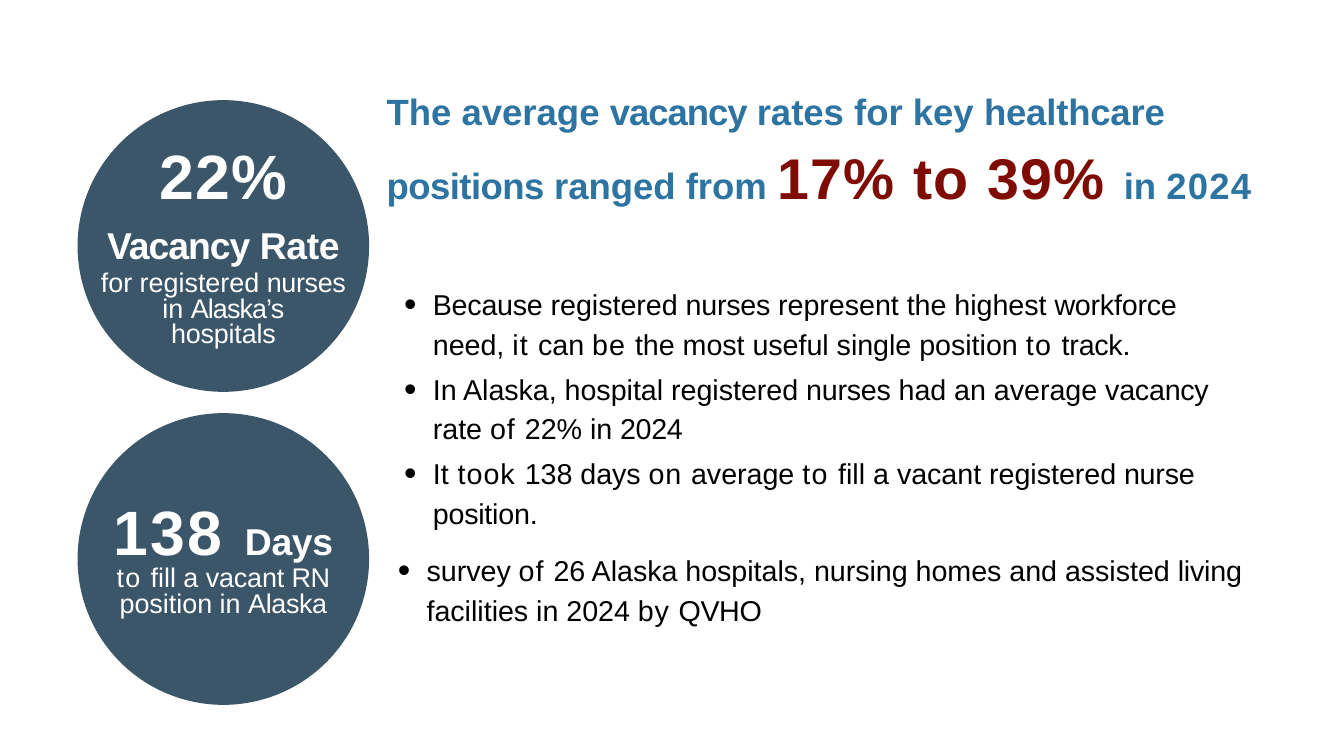
from dataclasses import dataclass
from lxml import etree
from pptx import Presentation
from pptx import util as u
from pptx.dml import color
from pptx.enum import shapes, text
from pptx.oxml import ns


@dataclass(frozen=True)
class Theme:
    font: str = "Arial"
    disc: str = "3B5669"
    white: str = "FFFFFF"
    black: str = "000000"
    blue: str = "2D74A2"
    red: str = "7F0C03"
    huge: float = 36
    range: float = 33
    label: float = 21.5
    title: float = 21
    body: float = 16.5
    small: float = 15.5


T = Theme()
BIG = (T.huge, T.white, True)
LABEL = (T.label, T.white, True)
SMALL = (T.small, T.white, False)
BODY = (T.body, T.black, False)
TITLE = (T.title, T.blue, True)
RANGE = (T.range, T.red, True)


def frame(slide, box, top=0, wrap=True):
    shape = slide.shapes.add_textbox(*map(u.Inches, box))
    body = shape.text_frame
    form = {"margin_left": 0, "margin_right": 0, "margin_bottom": 0,
            "margin_top": u.Inches(top), "word_wrap": wrap}
    for key, val in form.items():
        setattr(body, key, val)
    return body


def write(para, runs, form):
    for key, val in form.items():
        setattr(para, key, val)
    for words, style, gap in runs:
        run = para.add_run()
        run.text = words
        size, tint, bold = style
        look = {"name": T.font, "size": u.Pt(size), "bold": bold}
        for key, val in look.items():
            setattr(run.font, key, val)
        run.font.color.rgb = color.RGBColor.from_string(tint)
        run.font._element.set("spc", str(round(gap * 100)))


def fill(body, paras):
    for num, (runs, form) in enumerate(paras):
        para = body.add_paragraph() if num else body.paragraphs[0]
        write(para, runs, form)


def center(before):
    return {"alignment": text.PP_ALIGN.CENTER, "space_before": u.Pt(before)}


def badge(slide, box, head, lines):
    left, top, wide, high = box
    disc = slide.shapes.add_shape(shapes.MSO_SHAPE.OVAL, *map(u.Inches, box))
    disc.shadow.inherit = False
    disc.fill.solid()
    disc.fill.fore_color.rgb = color.RGBColor.from_string(T.disc)
    disc.line.fill.background()

    def place(drop, size, inset, paras):
        span, tall = size
        spot = (left + (wide - span) / 2, top + drop, span, tall)
        fill(frame(slide, spot, inset, False), paras)

    place(*head)
    first, rows = lines
    for num, (span, runs) in enumerate(rows):
        place(first + num * 0.205, (span, 0.29), 0.02,
              [([(words, SMALL, gap) for words, gap in runs], center(1.1))])


def title(slide, box):
    runs = [("The average ", TITLE, 0), ("vacancy ", TITLE, -0.6),
            ("rates for key ", TITLE, 0), ("healthcare ", TITLE, -0.1),
            ("positions ", TITLE, -0.3), ("ranged from ", TITLE, 0),
            ("17% to 39% ", RANGE, 0.8), ("in ", TITLE, 0),
            ("2024", TITLE, 0.7)]
    fill(frame(slide, box), [(runs, {"line_spacing": 1.14})])


def bullet(para, left):
    props = para._p.get_or_add_pPr()
    props.set("marL", str(u.Inches(left)))
    props.set("indent", str(u.Inches(-0.23)))
    for tag, key, val in (("a:buSzPct", "val", "124000"),
                          ("a:buFont", "typeface", T.font),
                          ("a:buChar", "char", "•")):
        etree.SubElement(props, ns.qn(tag)).set(key, val)


def points(slide, box, items):
    body = frame(slide, box, 0.01)
    fill(body, [([(words, BODY, gap) for words, gap in runs],
                 {"line_spacing": 1.15, "space_before": u.Pt(before)})
                for left, before, runs in items])
    for para, item in zip(body.paragraphs, items):
        bullet(para, item[0])


VACANT = (
    (0.14, (1.92, 1.21), 0.15,
     [([("22%", BIG, 0.9)], center(11.1)),
      ([("Vacancy ", LABEL, -0.6), ("Rate", LABEL, -0.2)], center(6.2))]),
    (1.3, [(2.01, [("for registered ", 0), ("nurses", -0.2)]),
           (1.01, [("in ", 0), ("Alaska’s", -0.5)]),
           (0.89, [("hospitals", -0.1)])]))
DAYS = (
    (0.62, (1.77, 0.63), 0.02,
     [([("138 ", BIG, 1.4), ("Days", LABEL, -0.2)], center(1.1))]),
    (1.16, [(1.71, [("to ", 0.8), ("fill a ", 0), ("vacant ", -0.1),
                    ("RN", -0.2)]),
            (1.72, [("position in ", 0), ("Alaska", -0.2)])]))
FACTS = [
    (0.3, 0.9, [("Because ", -0.1), ("registered ", 0), ("nurses ", -0.1),
                ("represent the highest ", 0), ("workforce ", -0.1),
                ("need, ", 0), ("it ", 0.7), ("can ", 0), ("be ", 0.6),
                ("the most useful single position ", 0), ("to ", 0.8),
                ("track.", -0.1)]),
    (0.3, 3.2, [("In Alaska, hospital registered ", 0), ("nurses ", -0.1),
                ("had an average ", 0), ("vacancy ", -0.1), ("rate ", 0),
                ("of ", 0.6), ("22% in ", 0), ("2024", -0.2)]),
    (0.3, 3.2, [("It", 0), (" took ", 0.6), ("138 days ", 0), ("on ", 0.5),
                ("average ", 0), ("to ", 0.8),
                ("fill a vacant registered ", 0),
                ("nurse position.", -0.1)]),
    (0.25, 10.2, [("survey ", 0), ("of ", 0.6),
                  ("26 Alaska hospitals, nursing homes and assisted ", 0),
                  ("living ", -0.1), ("facilities in 2024 ", 0),
                  ("by ", 0.5), ("QVHO", -0.2)])]


def main():
    deck = Presentation()
    deck.slide_width = u.Inches(10.74)
    deck.slide_height = u.Inches(6.03)
    slide = deck.slides.add_slide(deck.slide_layouts[6])
    for num, (head, lines) in enumerate((VACANT, DAYS)):
        badge(slide, (0.62, 0.8 + num * 2.5, 2.33, 2.33), head, lines)
    points(slide, (3.16, 2.24, 6.84, 2.8), FACTS)
    title(slide, (3.09, 0.66, 6.94, 1.01))
    deck.save("out.pptx")


if __name__ == "__main__":
    main()
